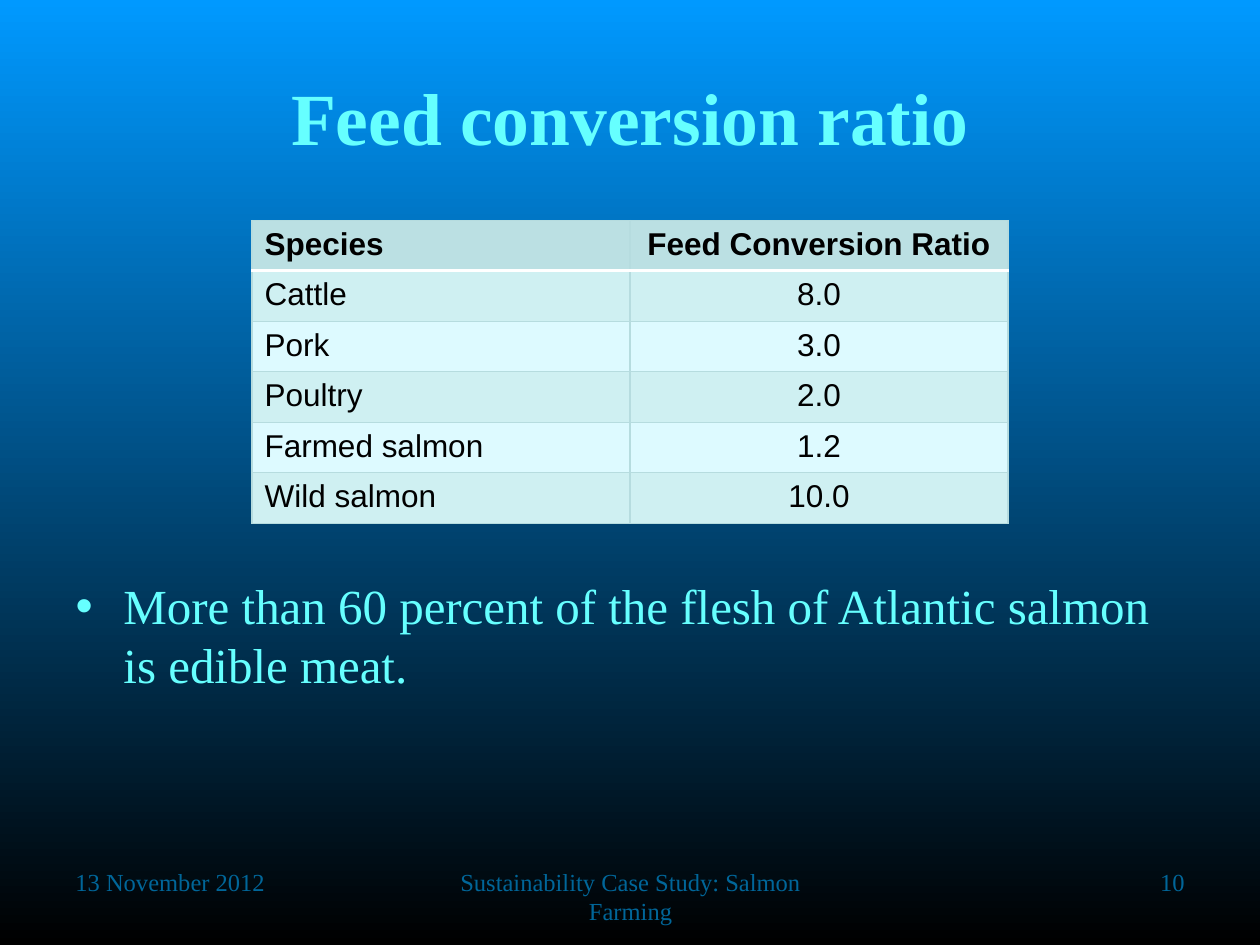
import pptx
import pptx.dml.color
import pptx.enum.text
import pptx.oxml
import pptx.oxml.ns
import pptx.util
from pptx.util import Inches

ALIGN = pptx.enum.text.PP_ALIGN
ANCHOR = pptx.enum.text.MSO_ANCHOR

COLORS = {
    "sky": "0099FF",
    "night": "000000",
    "text": "66FFFF",
    "footer": "006699",
    "table text": "000000",
    "header": "BBE0E3",
    "band": "CFF0F2",
    "plain": "DDFAFF",
    "border": "B6DCDF",
    "header rule": "FFFFFF",
}
TITLE = "Feed conversion ratio"
BULLET = "More than 60 percent of the flesh of Atlantic salmon is edible meat."
RATIOS = [
    ("Species", "Feed Conversion Ratio"),
    ("Cattle", "8.0"),
    ("Pork", "3.0"),
    ("Poultry", "2.0"),
    ("Farmed salmon", "1.2"),
    ("Wild salmon", "10.0"),
]
# text, left, width, alignment
FOOTERS = [
    ("13 November 2012", 0.5, 2.33, ALIGN.LEFT),
    ("Sustainability Case Study: Salmon Farming", 3.42, 3.17, ALIGN.CENTER),
    ("10", 7.17, 2.33, ALIGN.RIGHT),
]
ROW_HEIGHT = 0.38
COLUMN_WIDTH = 3


def rgb(name):
    return pptx.dml.color.RGBColor.from_string(COLORS[name])


def write_text(frame, text, size, color, font="Times New Roman", bold=False,
               align=ALIGN.LEFT, anchor=ANCHOR.TOP):
    frame.word_wrap = True
    frame.vertical_anchor = anchor
    paragraph = frame.paragraphs[0]
    paragraph.alignment = align
    paragraph.space_before = pptx.util.Pt(0)
    run = paragraph.add_run()
    run.text = text
    run.font.name = font
    run.font.size = pptx.util.Pt(size)
    run.font.bold = bold
    run.font.color.rgb = rgb(color)
    return paragraph


def place(shape, left, top, width, height):
    shape.left, shape.top = Inches(left), Inches(top)
    shape.width, shape.height = Inches(width), Inches(height)


def set_borders(cell, borders):
    """Add borders given in the order left, right, top, bottom."""
    properties = cell._tc.get_or_add_tcPr()
    for index, (side, (color, width)) in enumerate(borders.items()):
        line = pptx.oxml.parse_xml(
            f'<a:ln{side} {pptx.oxml.ns.nsdecls("a")} w="{pptx.util.Pt(width)}">'
            f'<a:solidFill><a:srgbClr val="{COLORS[color]}"/></a:solidFill></a:ln{side}>')
        properties.insert(index, line)


def add_ratio_table(slide):
    rows, columns = len(RATIOS), len(RATIOS[0])
    table = slide.shapes.add_table(
        rows, columns, Inches(2), Inches(1.75),
        Inches(columns * COLUMN_WIDTH), Inches(rows * ROW_HEIGHT)).table
    for row, values in enumerate(RATIOS):
        header = row == 0
        fill = "header" if header else "band" if row % 2 else "plain"
        for column, value in enumerate(values):
            cell = table.cell(row, column)
            cell.fill.solid()
            cell.fill.fore_color.rgb = rgb(fill)
            write_text(cell.text_frame, value, 18, "table text", font="Arial",
                       bold=header, align=ALIGN.CENTER if column else ALIGN.LEFT)
            borders = {side: ("border", 0.75) for side in "LRTB"}
            if header:
                borders["B"] = ("header rule", 2)
            elif row == 1:
                borders["T"] = ("header rule", 2)
            set_borders(cell, borders)


def main():
    presentation = pptx.Presentation()
    presentation.slide_width, presentation.slide_height = Inches(10), Inches(7.5)
    slide = presentation.slides.add_slide(presentation.slide_layouts[1])

    background = slide.background.fill
    background.gradient()
    background.gradient_angle = 270
    for stop, color in zip(background.gradient_stops, ("sky", "night")):
        stop.color.rgb = rgb(color)

    for text, left, width, align in FOOTERS:
        box = slide.shapes.add_textbox(
            Inches(left), Inches(6.83), Inches(width), Inches(0.52))
        write_text(box.text_frame, text, 14, "footer", align=align)

    title = slide.shapes.title
    place(title, 0.5, 0.3, 9, 1.25)
    write_text(title.text_frame, TITLE, 42, "text", bold=True,
               align=ALIGN.CENTER, anchor=ANCHOR.MIDDLE)

    body = slide.placeholders[1]
    place(body, 0.5, 4.52, 9, 2.18)
    paragraph = write_text(body.text_frame, BULLET, 28, "text")
    properties = paragraph._p.get_or_add_pPr()
    properties.set("marL", str(Inches(0.38)))
    properties.set("indent", str(Inches(-0.38)))

    add_ratio_table(slide)
    presentation.save("out.pptx")


if __name__ == "__main__":
    main()
